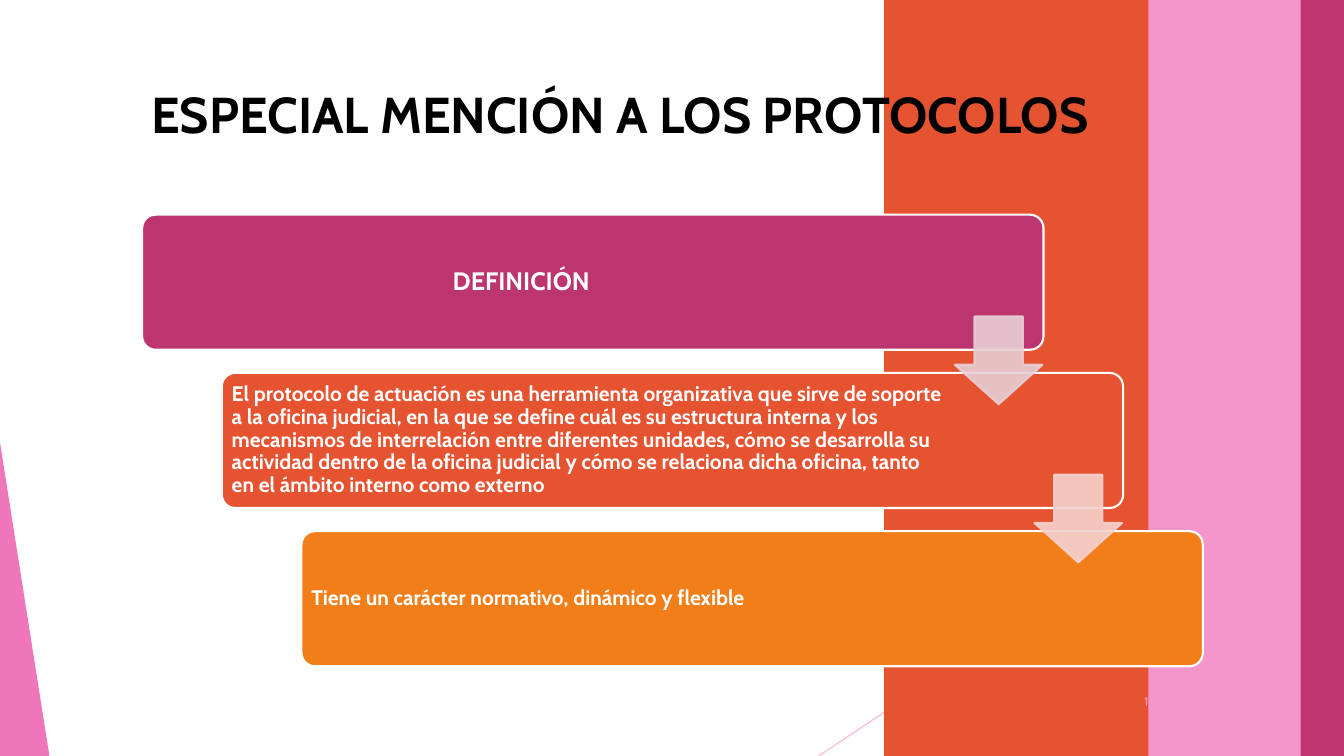
import pptx
import pptx.util
import pptx.dml.color
import pptx.enum.shapes
import pptx.enum.text
import pptx.oxml.ns
import lxml.etree

Inches = pptx.util.Inches
SHAPE = pptx.enum.shapes.MSO_SHAPE
ALIGN = pptx.enum.text.PP_ALIGN
ANCHOR = pptx.enum.text.MSO_ANCHOR
qn = pptx.oxml.ns.qn

COLORS = {
    "black": "000000", "white": "FFFFFF", "pink": "F496CB", "fuchsia": "EB3D9F",
    "red": "E65331", "magenta": "BC356F", "orange": "F27E19",
    "pale_rose": "E7CED5", "pale_salmon": "F5D1CE",
}

presentation = pptx.Presentation()
presentation.slide_width = Inches(13.33)
presentation.slide_height = Inches(7.5)
slide = presentation.slides.add_slide(presentation.slide_layouts[5])


def write(holder, text, size, color="white", bold=True, align=ALIGN.LEFT,
          anchor=ANCHOR.MIDDLE, spacing=1.0, margins=(0.1, 0.05, 0.1, 0.05)):
    frame = holder.text_frame
    frame.word_wrap = True
    frame.auto_size = pptx.enum.text.MSO_AUTO_SIZE.NONE
    frame.vertical_anchor = anchor
    frame.margin_left, frame.margin_top, frame.margin_right, frame.margin_bottom = map(Inches, margins)
    paragraph = frame.paragraphs[0]
    paragraph.alignment = align
    paragraph.line_spacing = spacing
    run = paragraph.add_run()
    run.text = text
    run.font.name = "Cabin"
    run.font.size = pptx.util.Pt(size)
    run.font.bold = bold
    run.font.color.rgb = pptx.dml.color.RGBColor.from_string(COLORS[color])


def paint(shape, fill=None, line=None, width=1.5, opacity=100):
    if fill:
        shape.shadow.inherit = False
        shape.fill.solid()
        shape.fill.fore_color.rgb = pptx.dml.color.RGBColor.from_string(COLORS[fill])
    if line:
        shape.line.color.rgb = pptx.dml.color.RGBColor.from_string(COLORS[line])
        shape.line.width = pptx.util.Pt(width)
    else:
        shape.line.fill.background()
    if opacity < 100:
        for color in shape.element.spPr.iter(qn("a:srgbClr")):
            lxml.etree.SubElement(color, qn("a:alpha")).set("val", str(opacity * 1000))


diagonal = slide.shapes.add_connector(
    pptx.enum.shapes.MSO_CONNECTOR.STRAIGHT, Inches(13.33), Inches(4.03), Inches(8.12), Inches(7.5))
paint(diagonal, line="pink", width=0.75, opacity=70)
lxml.etree.SubElement(diagonal.element.spPr, qn("a:effectLst"))

corner = slide.shapes.add_shape(
    SHAPE.ISOSCELES_TRIANGLE, Inches(0), Inches(4.39), Inches(0.49), Inches(3.11))
corner.adjustments[0] = 0
paint(corner, fill="fuchsia", opacity=70)

for left, width, color in [(8.77, 2.63, "red"), (11.39, 1.94, "pink"), (12.9, 0.43, "magenta")]:
    band = slide.shapes.add_shape(
        SHAPE.RECTANGLE, Inches(left), Inches(0), Inches(width), Inches(7.5))
    paint(band, fill=color)

title = slide.shapes.title
title.left, title.top, title.width, title.height = map(Inches, (1.4, 0.77, 11.15, 1.2))
write(title, "ESPECIAL MENCIÓN A LOS PROTOCOLOS", size=36, color="black", anchor=ANCHOR.TOP)
title.element.getparent().append(title.element)

steps = [
    ("DEFINICIÓN", "magenta", 18, ALIGN.CENTER, 1.48),
    ("El protocolo de actuación es una herramienta organizativa que sirve de soporte "
     "a la oficina judicial, en la que se define cuál es su estructura interna y los "
     "mecanismos de interrelación entre diferentes unidades, cómo se desarrolla su "
     "actividad dentro de la oficina judicial y cómo se relaciona dicha oficina, tanto "
     "en el ámbito interno como externo", "red", 15, ALIGN.LEFT, 1.72),
    ("Tiene un carácter normativo, dinámico y flexible", "orange", 15, ALIGN.LEFT, 1.72),
]
STEP_X, STEP_Y = 0.79, 1.57

for index, (text, color, size, align, right_margin) in enumerate(steps):
    card = slide.shapes.add_shape(
        SHAPE.ROUNDED_RECTANGLE, Inches(1.41 + index * STEP_X), Inches(2.13 + index * STEP_Y),
        Inches(8.94), Inches(1.34))
    card.adjustments[0] = 0.1
    paint(card, fill=color, line="white")
    write(card, text, size=size, align=align, spacing=0.9, margins=(0.06, 0.06, right_margin, 0.06))

for index, color in enumerate(["pale_rose", "pale_salmon"]):
    arrow = slide.shapes.add_shape(
        SHAPE.DOWN_ARROW, Inches(9.47 + index * STEP_X), Inches(3.14 + index * STEP_Y),
        Inches(0.87), Inches(0.87))
    arrow.adjustments[0] = 0.55
    arrow.adjustments[1] = 0.45
    paint(arrow, fill=color, line=color, opacity=90)

page_number = slide.shapes.add_textbox(Inches(10.81), Inches(6.76), Inches(0.75), Inches(0.4))
write(page_number, "14", size=9, color="pink", bold=False, align=ALIGN.RIGHT)

presentation.save("out.pptx")
